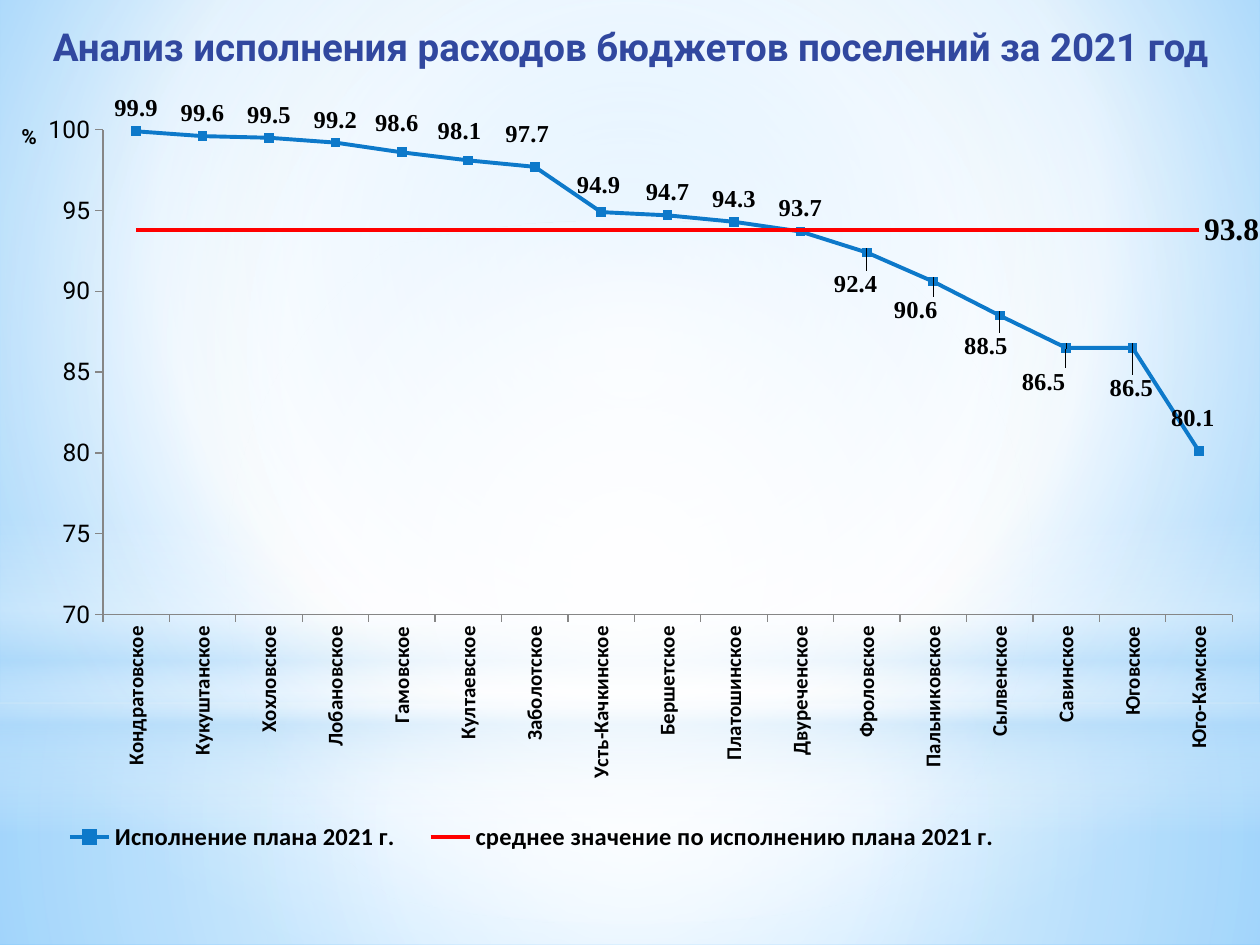
"""Build a slide charting settlement budget execution in 2021 against the average."""
import pptx
import pptx.chart.data
import pptx.dml.color
import pptx.enum.chart
import pptx.enum.shapes
import pptx.enum.text
import pptx.oxml
import pptx.oxml.ns
import pptx.util

WIDTH, HEIGHT = 10, 7.5
HEADING = "Анализ исполнения расходов бюджетов поселений за 2021 год"
EXECUTION = {
    "Кондратовское": 99.9, "Кукуштанское": 99.6, "Хохловское": 99.5,
    "Лобановское": 99.2, "Гамовское": 98.6, "Култаевское": 98.1,
    "Заболотское": 97.7, "Усть-Качкинское": 94.9, "Бершетское": 94.7,
    "Платошинское": 94.3, "Двуреченское": 93.7, "Фроловское": 92.4,
    "Пальниковское": 90.6, "Сылвенское": 88.5, "Савинское": 86.5,
    "Юговское": 86.5, "Юго-Камское": 80.1,
}
EXECUTION_NAME = "Исполнение плана 2021 г."
AVERAGE_NAME = "среднее значение по исполнению плана 2021 г."
AVERAGE = 93.8
LABEL_SHIFTS = {
    4: (-0.4, -0.8), 5: (-0.7, -0.8), 6: (-0.6, -1.2), 7: (-0.2, -0.5),
    11: (-0.9, 6.4), 12: (-1.4, 6.1), 13: (-1.1, 6.3), 14: (-1.8, 6.7),
    15: (-0.1, 7.5), 16: (-0.5, -1.2),
}
THEME = {
    "heading": "31489F", "text": "000000", "axis": "868686",
    "execution": "0D79CA", "average": "FF0000",
    "main": "Roboto", "names": "Calibri", "figures": "Times New Roman",
    "heading_size": 22, "base_size": 18, "scale_size": 14, "name_size": 12,
    "line": 2.25, "marker": 5,
}
WHITE, SKY = "FFFFFF", "B4DCFA"
CENTER = (50, 50, 50, 50)
BACKDROP = [(0, "9ED5FF", 100), (60, WHITE, 100), (100, "5BB9FF", 100)]
RECTANGLE = pptx.enum.shapes.MSO_SHAPE.RECTANGLE
OVAL = pptx.enum.shapes.MSO_SHAPE.OVAL
GLOWS = [
    (RECTANGLE, 5.58, 1.92, [(0, WHITE, 91), (37, WHITE, 76), (100, SKY, 79)], CENTER),
    (RECTANGLE, 0, 5.58, [(0, WHITE, 89), (48, WHITE, 62), (100, SKY, 79)], CENTER),
    (RECTANGLE, 4.12, 2.5, [(0, WHITE, 0), (29, WHITE, 30), (45, SKY, 40),
                            (55, WHITE, 26), (65, SKY, 60), (100, WHITE, 0)], None),
    (OVAL, 1.75, 5.58, [(0, WHITE, 100), (56, WHITE, 0)], CENTER),
]


def color(name):
    return pptx.dml.color.RGBColor.from_string(THEME[name])


def inches(*lengths):
    return [pptx.util.Inches(length) for length in lengths]


def style(font, face, size, bold=True, tint="text"):
    font.name = THEME[face]
    font.size = pptx.util.Pt(THEME[size])
    font.bold = bold
    font.color.rgb = color(tint)


def paint_gradient(properties, stops, focus):
    marks = "".join(
        f'<a:gs pos="{at * 1000}"><a:srgbClr val="{tint}">'
        f'<a:alpha val="{opacity * 1000}"/></a:srgbClr></a:gs>'
        for at, tint, opacity in stops)
    if focus:
        sides = " ".join(f'{side}="{share * 1000}"' for side, share in zip("ltrb", focus))
        course = f'<a:path path="circle"><a:fillToRect {sides}/></a:path>'
    else:
        course = '<a:lin ang="5400000" scaled="0"/>'
    gradient = pptx.oxml.parse_xml(
        f'<a:gradFill {pptx.oxml.ns.nsdecls("a")} rotWithShape="1">'
        f'<a:gsLst>{marks}</a:gsLst>{course}</a:gradFill>')
    properties.replace(properties.find(pptx.oxml.ns.qn("a:solidFill")), gradient)


def place(part, after=None, inner=False, edges=True, **percents):
    for layout in part.xpath("./c:layout"):
        part.remove(layout)
    target = '<c:layoutTarget val="inner"/>' if inner else ""
    modes = '<c:xMode val="edge"/><c:yMode val="edge"/>' if edges else ""
    shares = "".join(f'<c:{key} val="{value / 100:.4f}"/>' for key, value in percents.items())
    layout = pptx.oxml.parse_xml(
        f'<c:layout {pptx.oxml.ns.nsdecls("c")}><c:manualLayout>'
        f'{target}{modes}{shares}</c:manualLayout></c:layout>')
    if after:
        part.find(pptx.oxml.ns.qn(after)).addnext(layout)
    else:
        part.insert(0, layout)


def turn(part, angle):
    for body in part.xpath(".//a:bodyPr"):
        body.set("rot", str(angle * 60000))
        body.set("vert", "horz")


def add_backdrop(slide):
    slide.background.fill.solid()
    paint_gradient(slide.element.xpath(".//p:bgPr")[0], BACKDROP, (20, 10, 20, 60))
    for outline, top, height, stops, focus in GLOWS:
        glow = slide.shapes.add_shape(outline, *inches(0, top, WIDTH, height))
        glow.shadow.inherit = False
        glow.fill.solid()
        glow.line.fill.background()
        paint_gradient(glow.element.spPr, stops, focus)


def add_heading(slide):
    frame = slide.shapes.add_textbox(*inches(0.2, 0.13, 9.61, 1.07)).text_frame
    frame.word_wrap = True
    frame.paragraphs[0].alignment = pptx.enum.text.PP_ALIGN.CENTER
    run = frame.paragraphs[0].add_run()
    run.text = HEADING
    style(run.font, "main", "heading_size", tint="heading")


def add_execution_chart(slide):
    data = pptx.chart.data.CategoryChartData()
    data.categories = list(EXECUTION)
    data.add_series(EXECUTION_NAME, list(EXECUTION.values()))
    data.add_series(AVERAGE_NAME, [AVERAGE] * len(EXECUTION))
    chart = slide.shapes.add_chart(
        pptx.enum.chart.XL_CHART_TYPE.LINE_MARKERS, *inches(0.04, 0.75, 9.96, 6.77), data).chart
    style(chart.font, "main", "base_size", False)
    chart.has_title = False
    chart.plots[0].vary_by_categories = False
    place(chart.element.xpath(".//c:plotArea")[0], inner=True, x=7.8, y=3.7, w=90, h=57.1)
    style_axes(chart)
    style_series(*chart.plots[0].series)
    chart.has_legend = True
    chart.legend.position = pptx.enum.chart.XL_LEGEND_POSITION.BOTTOM
    chart.legend.include_in_layout = False
    style(chart.legend.font, "names", "scale_size")
    place(chart.legend.element if hasattr(chart.legend, "element")
          else chart.element.xpath(".//c:legend")[0], "c:legendPos", x=3, y=84, w=78, h=6)


def style_axes(chart):
    names, scale = chart.category_axis, chart.value_axis
    for axis in (names, scale):
        axis.has_major_gridlines = False
        axis.major_tick_mark = pptx.enum.chart.XL_TICK_MARK.OUTSIDE
        axis.format.line.color.rgb = color("axis")
    style(names.tick_labels.font, "names", "name_size")
    turn(chart.element.xpath(".//c:catAx/c:txPr")[0], -90)
    style(scale.tick_labels.font, "main", "scale_size", False)
    scale.minimum_scale, scale.maximum_scale, scale.major_unit = 70, 100, 5
    scale.tick_labels.number_format = "#,##0"
    scale.tick_labels.number_format_is_linked = False
    run = scale.axis_title.text_frame.paragraphs[0].add_run()
    run.text = "%"
    style(run.font, "main", "name_size")
    unit = chart.element.xpath(".//c:valAx/c:title")[0]
    turn(unit, 0)
    place(unit, "c:tx", x=1, y=2.4)


def style_series(execution, average):
    for series, tint in ((execution, "execution"), (average, "average")):
        series.smooth = False
        series.format.line.color.rgb = color(tint)
        series.format.line.width = pptx.util.Pt(THEME["line"])
    execution.marker.style = pptx.enum.chart.XL_MARKER_STYLE.SQUARE
    execution.marker.size = THEME["marker"]
    execution.marker.format.fill.solid()
    execution.marker.format.fill.fore_color.rgb = color("execution")
    execution.marker.format.line.color.rgb = color("execution")
    average.marker.style = pptx.enum.chart.XL_MARKER_STYLE.NONE

    position = pptx.enum.chart.XL_LABEL_POSITION
    figures = execution.data_labels
    figures.show_value = True
    figures.number_format = "#,##0.0"
    figures.number_format_is_linked = False
    figures.position = position.ABOVE
    style(figures.font, "figures", "scale_size")
    for index, (right, down) in LABEL_SHIFTS.items():
        label = execution.points[index].data_label
        style(label.font, "figures", "scale_size")
        label.position = position.ABOVE
        shifted = figures._element.xpath(f"./c:dLbl[c:idx/@val='{index}']")[0]
        place(shifted, "c:idx", edges=False, x=right, y=down)
    last = average.points[len(EXECUTION) - 1].data_label
    style(last.font, "figures", "base_size")
    last.position = position.RIGHT


def main():
    deck = pptx.Presentation()
    deck.slide_width, deck.slide_height = inches(WIDTH, HEIGHT)
    slide = deck.slides.add_slide(deck.slide_layouts[6])
    add_backdrop(slide)
    add_heading(slide)
    add_execution_chart(slide)
    deck.save("out.pptx")


if __name__ == "__main__":
    main()
